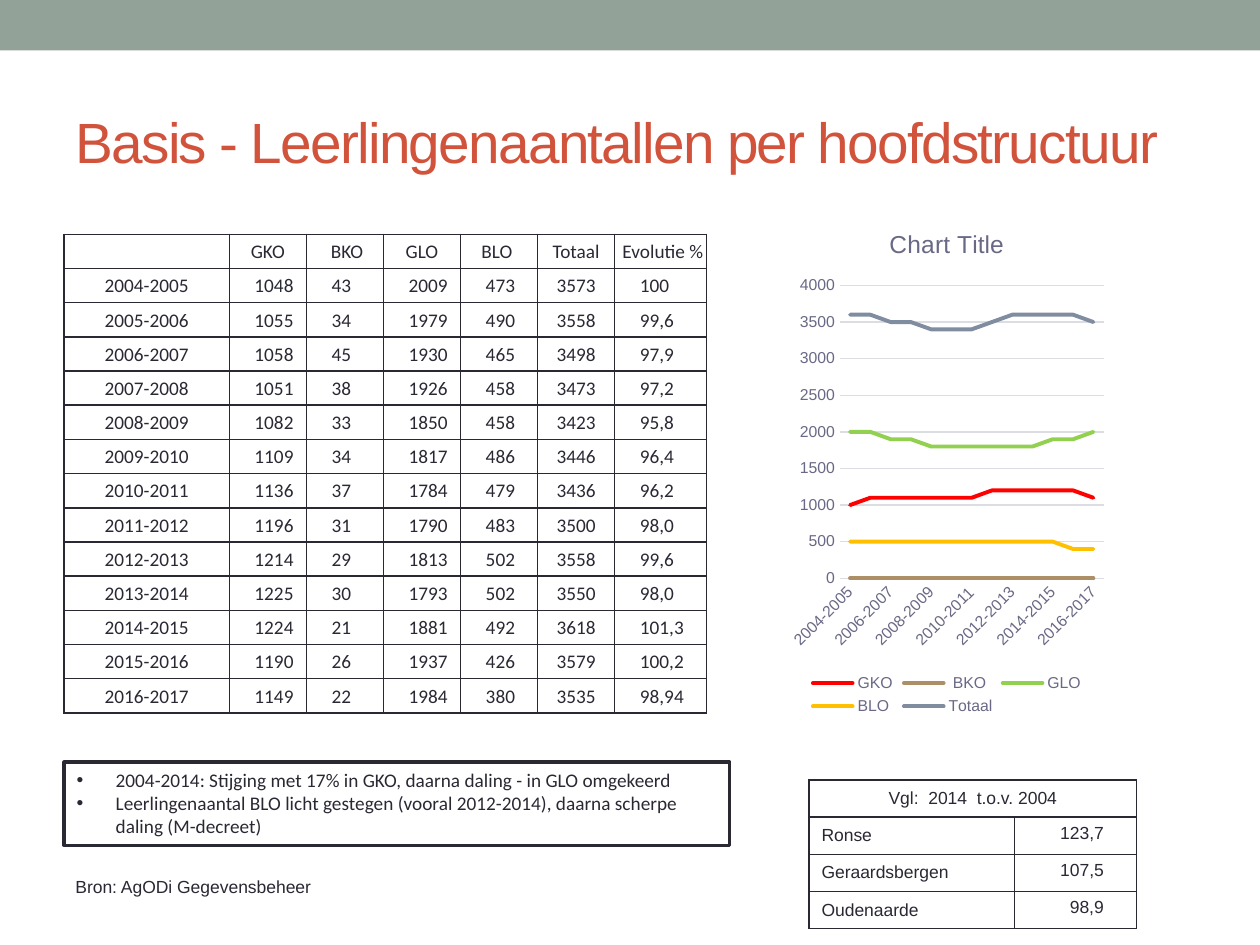
import lxml.etree
import pptx
import pptx.chart.data
import pptx.dml.color
import pptx.enum.chart
import pptx.enum.shapes
import pptx.enum.text
import pptx.oxml
import pptx.oxml.ns
import pptx.util
from pptx.util import Inches

COLORS = {
    "band": "93A299", "title": "D2533C", "ink": "292934", "paper": "FFFFFF",
    "muted": "696986", "grid": "DCDCE3",
}
SERIES_COLORS = ["FF0000", "AD8F67", "92D050", "FFC000", "808DA0"]
HEADERS = ["", "GKO", " BKO", "GLO", "BLO ", "Totaal", " Evolutie %"]
PUPILS = [
    (1048, 43, 2009, 473, 3573, "100"),
    (1055, 34, 1979, 490, 3558, "99,6"),
    (1058, 45, 1930, 465, 3498, "97,9"),
    (1051, 38, 1926, 458, 3473, "97,2"),
    (1082, 33, 1850, 458, 3423, "95,8"),
    (1109, 34, 1817, 486, 3446, "96,4"),
    (1136, 37, 1784, 479, 3436, "96,2"),
    (1196, 31, 1790, 483, 3500, "98,0"),
    (1214, 29, 1813, 502, 3558, "99,6"),
    (1225, 30, 1793, 502, 3550, "98,0"),
    (1224, 21, 1881, 492, 3618, "101,3"),
    (1190, 26, 1937, 426, 3579, "100,2"),
    (1149, 22, 1984, 380, 3535, "98,94"),
]
YEARS = [f"{year}-{year + 1}" for year in range(2004, 2004 + len(PUPILS))]
COMPARISON = [("Ronse", "123,7"), ("Geraardsbergen", "107,5"), ("Oudenaarde", "98,9")]
FINDINGS = [
    "2004-2014: Stijging met 17% in GKO, daarna daling - in GLO omgekeerd",
    "Leerlingenaantal BLO licht gestegen (vooral 2012-2014), daarna scherpe daling (M-decreet)",
]
ALIGN = pptx.enum.text.PP_ALIGN
MIDDLE = pptx.enum.text.MSO_ANCHOR.MIDDLE
TOP = pptx.enum.text.MSO_ANCHOR.TOP
TIGHT = (0.01, 0.01, 0.01, 0)
INDENTED = (0.2, 0.01, 0.02, 0)
NORMAL = (0.1, 0.05, 0.1, 0.05)
FIGURE = (0.16, 0.05, 0.26, 0.05)


def rgb(name):
    """Return the colour for a palette name or a hex string."""
    return pptx.dml.color.RGBColor.from_string(COLORS.get(name, name))


class SlideBuilder:
    """Hold the slide and its style, and add each kind of element."""

    def __init__(self, slide):
        """Keep the slide to draw on."""
        self.slide = slide

    def style_font(self, font, size, name="Arial", color="ink"):
        """Set size, typeface and colour of a font."""
        font.size = pptx.util.Pt(size)
        font.name = name
        font.bold = False
        font.color.rgb = rgb(color)

    def style_paragraph(self, paragraph, size, name="Arial", color="ink", align=ALIGN.LEFT):
        """Align a paragraph and format its runs."""
        paragraph.alignment = align
        for run in paragraph.runs:
            self.style_font(run.font, size, name, color)

    def title(self, text, box):
        """Place and format the title placeholder."""
        shape = self.slide.shapes.title
        shape.left, shape.top, shape.width, shape.height = map(Inches, box)
        frame = shape.text_frame
        frame.text = text
        frame.vertical_anchor = MIDDLE
        self.style_paragraph(frame.paragraphs[0], 32.4, color="title")
        frame.paragraphs[0].runs[0].font._element.set("spc", "-100")

    def rectangle(self, box, fill, line_width=None):
        """Add a rectangle, outlined when a line width is given."""
        shape = self.slide.shapes.add_shape(
            pptx.enum.shapes.MSO_SHAPE.RECTANGLE, *map(Inches, box))
        shape.shadow.inherit = False
        shape.fill.solid()
        shape.fill.fore_color.rgb = rgb(fill)
        if line_width is None:
            shape.line.fill.background()
        else:
            shape.line.color.rgb = rgb("ink")
            shape.line.width = pptx.util.Pt(line_width)
        return shape

    def bullet_box(self, lines, box):
        """Add an outlined box with bulleted lines."""
        frame = self.rectangle(box, "paper", 2.08).text_frame
        frame.word_wrap = True
        frame.vertical_anchor = TOP
        frame.text = "\n".join(lines)
        for paragraph in frame.paragraphs:
            self.style_paragraph(paragraph, 11, "Calibri")
            properties = paragraph._p.get_or_add_pPr()
            properties.set("marL", str(Inches(0.31)))
            properties.set("indent", str(Inches(-0.31)))
            for tag, key, value in (("a:buFont", "typeface", "Arial"), ("a:buChar", "char", "•")):
                lxml.etree.SubElement(properties, pptx.oxml.ns.qn(tag)).set(key, value)

    def text(self, text, box):
        """Add a single line of text."""
        frame = self.slide.shapes.add_textbox(*map(Inches, box)).text_frame
        frame.word_wrap = False
        frame.text = text
        self.style_paragraph(frame.paragraphs[0], 10)

    def table(self, left, top, widths, row_height, row_count):
        """Add an empty table with the given grid."""
        table = self.slide.shapes.add_table(
            row_count, len(widths), Inches(left), Inches(top),
            Inches(sum(widths)), Inches(row_height * row_count)).table
        table.first_row = table.horz_banding = False
        for column, width in zip(table.columns, widths):
            column.width = Inches(width)
        for row in table.rows:
            row.height = Inches(row_height)
        return table

    def cell(self, cell, text, size, name, align, margins, anchor=MIDDLE):
        """Fill a table cell with bordered, formatted text."""
        cell.text = text
        cell.vertical_anchor = anchor
        cell.margin_left, cell.margin_top, cell.margin_right, cell.margin_bottom = map(Inches, margins)
        paragraph = cell.text_frame.paragraphs[0]
        self.style_paragraph(paragraph, size, name, align=align)
        if not text:
            ending = lxml.etree.SubElement(paragraph._p, pptx.oxml.ns.qn("a:endParaRPr"))
            ending.set("sz", str(size * 100))
        for side in "LRTB":
            cell._tc.get_or_add_tcPr().append(pptx.oxml.parse_xml(
                f'<a:ln{side} {pptx.oxml.ns.nsdecls("a")} w="12700"><a:solidFill>'
                f'<a:srgbClr val="{COLORS["ink"]}"/></a:solidFill></a:ln{side}>'))
        cell.fill.solid()
        cell.fill.fore_color.rgb = rgb("paper")

    def line_chart(self, title, categories, series, box):
        """Add a line chart with a title and a legend below."""
        data = pptx.chart.data.CategoryChartData()
        data.categories = categories
        for name, values in series:
            data.add_series(name, values)
        chart = self.slide.shapes.add_chart(
            pptx.enum.chart.XL_CHART_TYPE.LINE, *map(Inches, box), data).chart
        self.style_font(chart.font, 10)
        chart.has_title = True
        chart.chart_title.text_frame.text = title
        self.style_paragraph(
            chart.chart_title.text_frame.paragraphs[0], 14, color="muted", align=ALIGN.CENTER)
        chart.has_legend = True
        chart.legend.position = pptx.enum.chart.XL_LEGEND_POSITION.BOTTOM
        chart.legend.include_in_layout = False
        self.style_font(chart.legend.font, 9, color="muted")
        for axis in (chart.category_axis, chart.value_axis):
            axis.major_tick_mark = pptx.enum.chart.XL_TICK_MARK.NONE
            self.style_font(axis.tick_labels.font, 9, color="muted")
        chart.category_axis._element.txPr.bodyPr.set("rot", "-2700000")
        chart.value_axis.minimum_scale = 0
        chart.value_axis.maximum_scale = 4000
        chart.value_axis.major_unit = 500
        chart.value_axis.format.line.fill.background()
        for line in (chart.category_axis.format.line, chart.value_axis.major_gridlines.format.line):
            line.color.rgb = rgb("grid")
            line.width = pptx.util.Pt(0.75)
        chart.plots[0].vary_by_categories = False
        for item, color in zip(chart.plots[0].series, SERIES_COLORS):
            item.smooth = False
            item.marker.style = pptx.enum.chart.XL_MARKER_STYLE.NONE
            item.format.line.color.rgb = rgb(color)
            item.format.line.width = pptx.util.Pt(2.25)
            item.format.line._get_or_add_ln().set("cap", "rnd")


def main():
    """Build the slide and save the presentation."""
    presentation = pptx.Presentation()
    presentation.slide_width, presentation.slide_height = Inches(10), Inches(7.5)
    builder = SlideBuilder(presentation.slides.add_slide(presentation.slide_layouts[5]))
    builder.rectangle((0, 0, 10, 0.4), "band")
    builder.title("Basis - Leerlingenaantallen per hoofdstructuur", (0.5, 0.58, 9, 1.08))

    rows = [HEADERS] + [(year, *values) for year, values in zip(YEARS, PUPILS)]
    widths = [1.31] + [(5.1 - 1.31 - 0.73) / 5] * 5 + [0.73]
    pupils = builder.table(0.51, 1.86, widths, 3.8 / len(rows), len(rows))
    for row_index, row in enumerate(rows):
        for column_index, value in enumerate(row):
            centred = row_index == 0 or column_index in (0, 5)
            builder.cell(pupils.cell(row_index, column_index), str(value), 11, "Calibri",
                         ALIGN.CENTER if centred else ALIGN.LEFT, TIGHT if centred else INDENTED)

    builder.bullet_box(FINDINGS, (0.51, 6.05, 5.28, 0.66))
    builder.text("Bron: AgODi Gegevensbeheer", (0.5, 6.9, 2.09, 0.27))

    comparison = builder.table(6.42, 6.19, [1.63, 0.97], 0.295, len(COMPARISON) + 1)
    for column_index, heading in enumerate(("Vgl:  2014  t.o.v. 2004", "")):
        builder.cell(comparison.cell(0, column_index), heading, 10, "Arial", ALIGN.CENTER, NORMAL)
    comparison.cell(0, 0).merge(comparison.cell(0, 1))
    for row_index, (town, figure) in enumerate(COMPARISON, start=1):
        builder.cell(comparison.cell(row_index, 0), town, 10, "Arial", ALIGN.LEFT, NORMAL)
        builder.cell(comparison.cell(row_index, 1), figure, 10, "Arial", ALIGN.RIGHT, FIGURE, TOP)

    series = [(name, [round(value, -2) for value in values])
              for name, values in zip(HEADERS[1:6], zip(*PUPILS))]
    builder.line_chart("Chart Title", YEARS, series, (6.22, 1.64, 2.59, 4.08))
    presentation.save("out.pptx")


if __name__ == "__main__":
    main()
